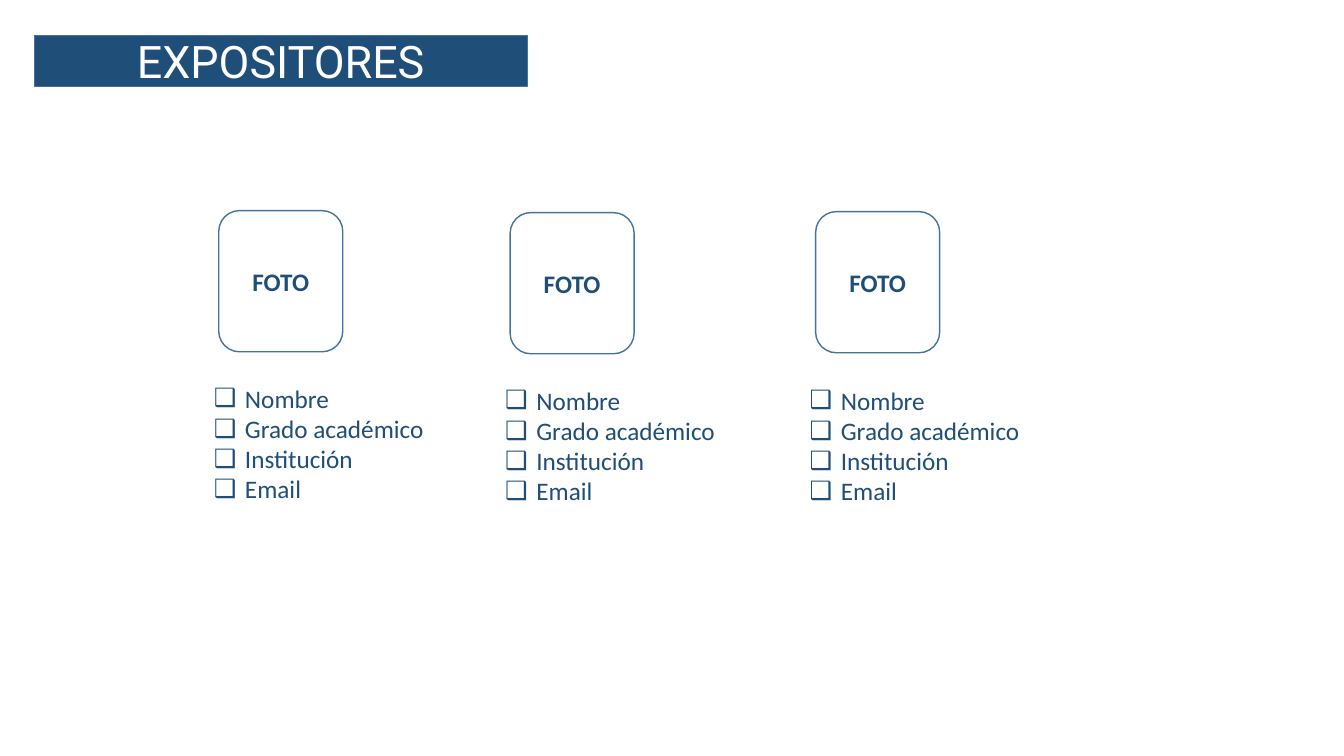
from dataclasses import dataclass

import lxml.etree
import pptx
import pptx.dml.color
import pptx.enum.shapes
import pptx.enum.text
import pptx.oxml.ns
import pptx.util

Inches = pptx.util.Inches
Pt = pptx.util.Pt

COLORS = {"navy": "1F4E79", "outline": "43739E", "white": "FFFFFF"}
DETAILS = ("Nombre", "Grado académico", "Institución", "Email")
COMPARISON_LAYOUT = 4


@dataclass(frozen=True)
class Speaker:
    placeholder_index: int
    photo_left: float
    photo_top: float
    details_left: float
    details_top: float


SPEAKERS = (
    Speaker(1, 2.17, 2.09, 2.02, 3.75),
    Speaker(2, 5.06, 2.11, 4.91, 3.77),
    Speaker(3, 8.09, 2.10, 7.93, 3.77),
)


def color(name: str) -> pptx.dml.color.RGBColor:
    return pptx.dml.color.RGBColor.from_string(COLORS[name])


def place(shape, left: float, top: float, width: float, height: float) -> None:
    shape.left, shape.top = Inches(left), Inches(top)
    shape.width, shape.height = Inches(width), Inches(height)


def paint(shape, fill: str) -> None:
    shape.fill.solid()
    shape.fill.fore_color.rgb = color(fill)
    shape.line.color.rgb = color("outline")
    shape.line.width = Pt(1)


def add_run(paragraph, text: str, font_name: str, size: int, ink: str, bold: bool = False) -> None:
    run = paragraph.add_run()
    run.text = text
    run.font.name = font_name
    run.font.size = Pt(size)
    run.font.bold = bold
    run.font.color.rgb = color(ink)


def write_centered(shape, text: str, font_name: str, size: int, ink: str, bold: bool = False) -> None:
    frame = shape.text_frame
    frame.auto_size = pptx.enum.text.MSO_AUTO_SIZE.NONE
    frame.vertical_anchor = pptx.enum.text.MSO_ANCHOR.MIDDLE
    paragraph = frame.paragraphs[0]
    paragraph.alignment = pptx.enum.text.PP_ALIGN.CENTER
    add_run(paragraph, text, font_name, size, ink, bold)


def draw_title(slide) -> None:
    title = slide.shapes.title
    place(title, 0.34, 0.35, 4.89, 0.51)
    geometry = lxml.etree.SubElement(
        title.element.spPr, pptx.oxml.ns.qn("a:prstGeom"), prst="bevel"
    )
    lxml.etree.SubElement(geometry, pptx.oxml.ns.qn("a:avLst"))
    paint(title, "navy")
    write_centered(title, "EXPOSITORES", "Roboto", 32, "white")


def draw_photo_frame(slide, speaker: Speaker) -> None:
    photo = slide.shapes.add_shape(
        pptx.enum.shapes.MSO_SHAPE.ROUNDED_RECTANGLE,
        Inches(speaker.photo_left), Inches(speaker.photo_top), Inches(1.23), Inches(1.4),
    )
    photo.shadow.inherit = False
    paint(photo, "white")
    write_centered(photo, "FOTO", "Calibri", 18, "navy", bold=True)


def add_bullet(paragraph) -> None:
    properties = paragraph._p.get_or_add_pPr()
    properties.set("marL", str(Inches(0.31)))
    properties.set("indent", str(-Inches(0.31)))
    lxml.etree.SubElement(properties, pptx.oxml.ns.qn("a:buChar"), char="❑")


def draw_details(slide, speaker: Speaker) -> None:
    details = slide.placeholders[speaker.placeholder_index]
    place(details, speaker.details_left, speaker.details_top, 2.31, 1.31)
    frame = details.text_frame
    frame.word_wrap = False
    frame.auto_size = pptx.enum.text.MSO_AUTO_SIZE.SHAPE_TO_FIT_TEXT
    frame.vertical_anchor = pptx.enum.text.MSO_ANCHOR.TOP
    for position, detail in enumerate(DETAILS):
        paragraph = frame.add_paragraph() if position else frame.paragraphs[0]
        paragraph.space_before = Pt(0)
        add_bullet(paragraph)
        add_run(paragraph, detail, "Calibri", 18, "navy")


def main() -> None:
    presentation = pptx.Presentation()
    presentation.slide_width = Inches(13.33)
    presentation.slide_height = Inches(7.5)
    slide = presentation.slides.add_slide(presentation.slide_layouts[COMPARISON_LAYOUT])
    draw_title(slide)
    for speaker in SPEAKERS:
        draw_photo_frame(slide, speaker)
        draw_details(slide, speaker)
    unused = slide.placeholders[4].element
    unused.getparent().remove(unused)
    presentation.save("out.pptx")


if __name__ == "__main__":
    main()
